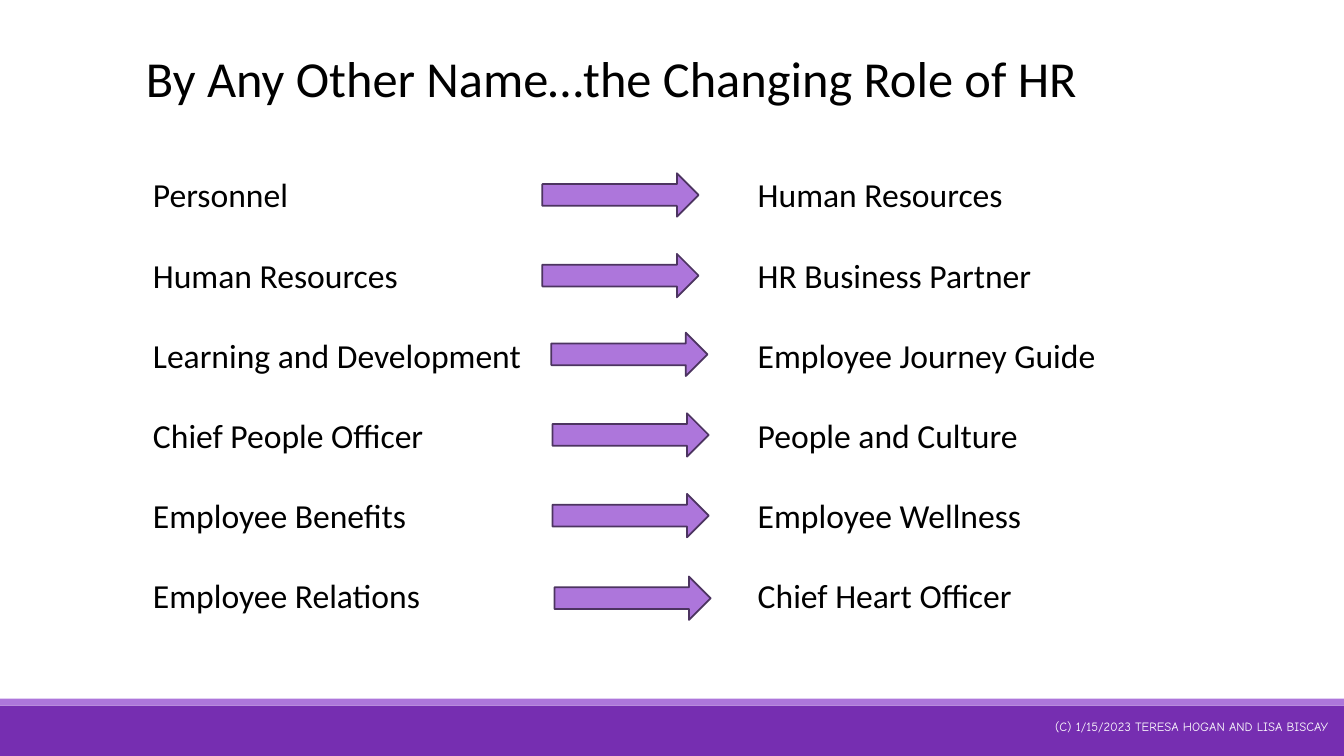
import pptx
import pptx.util
import pptx.dml.color
import pptx.enum.shapes
import pptx.enum.text
import pptx.oxml

Pt = pptx.util.Pt
RGB = pptx.dml.color.RGBColor.from_string
kinds = pptx.enum.shapes.MSO_SHAPE
align = pptx.enum.text.PP_ALIGN
anchor = pptx.enum.text.MSO_ANCHOR

colors = {
    "band": "762EB1",
    "accent": "AD76DB",
    "edge": "4C3460",
    "text": "000000",
    "foot": "FFFFFF",
}
roles = [
    ("Personnel", "Human Resources"),
    ("Human Resources", "HR Business Partner"),
    ("Learning and Development", "Employee Journey Guide"),
    ("Chief People Officer", "People and Culture"),
    ("Employee Benefits", "Employee Wellness"),
    ("Employee Relations", "Chief Heart Officer"),
]
arrows = [(387.4, 123.8), (387.4, 181.4), (393.8, 237.6),
          (394.6, 295.2), (394.6, 352.8), (396, 411.8)]

deck = pptx.Presentation()
deck.slide_width = Pt(960)
deck.slide_height = Pt(540)
slide = deck.slides.add_slide(deck.slide_layouts[6])


def add_form(kind, box, fill, edge=None):
    form = slide.shapes.add_shape(kind, *map(Pt, box))
    form.shadow.inherit = False
    form.fill.solid()
    form.fill.fore_color.rgb = RGB(colors[fill])
    if edge:
        form.line.color.rgb = RGB(colors[edge])
        form.line.width = Pt(1.25)
    else:
        form.line.fill.background()


def add_text(box, lines, style, color, tab=None, gap=0):
    frame = slide.shapes.add_textbox(*map(Pt, box)).text_frame
    frame.word_wrap = True
    for i, line in enumerate(lines):
        para = frame.paragraphs[0] if i == 0 else frame.add_paragraph()
        para.text = line
        if tab:
            stops = pptx.oxml.parse_xml(
                '<a:tabLst xmlns:a="http://schemas.openxmlformats.org/drawingml/2006/main">'
                f'<a:tab pos="{Pt(tab)}" algn="l"/></a:tabLst>')
            para._p.get_or_add_pPr().append(stops)
        if i and gap:
            para.space_before = Pt(gap)
        for name, value in style.items():
            setattr(para.font, name, value)
        para.font.color.rgb = RGB(colors[color])
    return frame


add_form(kinds.RECTANGLE, (0, 504, 960, 36), "band")
add_form(kinds.RECTANGLE, (0, 499, 960, 5), "accent")

foot = add_text((742.3, 506.9, 217.5, 24.5),
                ["(C) 1/15/2023 TERESA HOGAN AND LISA BISCAY"],
                {"name": "Comic Neue", "size": Pt(9)}, "foot")
foot.vertical_anchor = anchor.MIDDLE
foot.paragraphs[0].alignment = align.CENTER

add_text((97.2, 30.2, 737.3, 51.1),
         ["By Any Other Name…the Changing Role of HR"],
         {"name": "Calibri", "size": Pt(36)}, "text")
add_text((102.2, 121, 753.8, 349.2),
         [f"{old}\t{new}" for old, new in roles],
         {"name": "Calibri", "size": Pt(24)}, "text", tab=432, gap=28.4)

for left, top in arrows:
    add_form(kinds.RIGHT_ARROW, (left, top, 111.6, 31), "accent", "edge")

deck.save("out.pptx")
